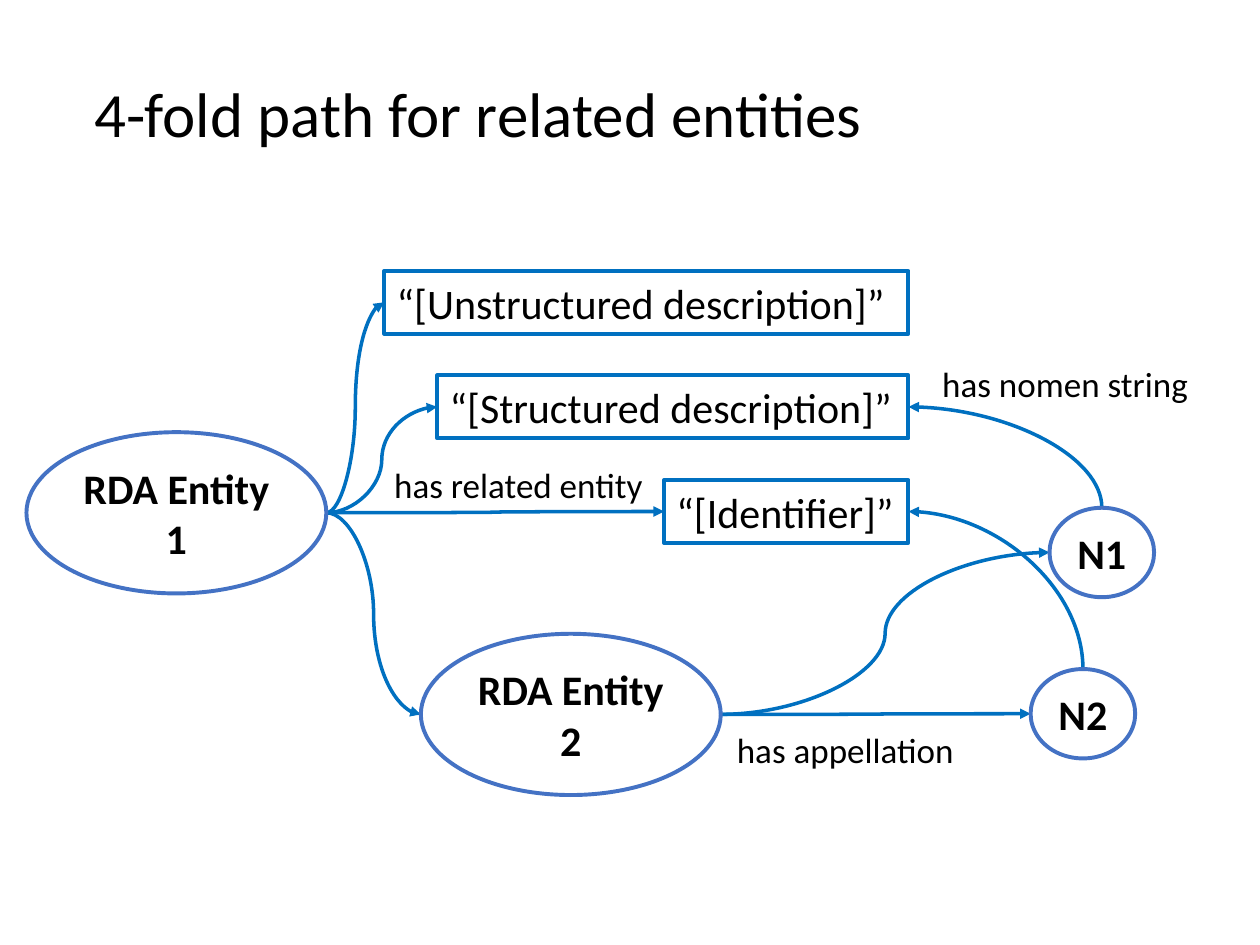
import pptx
import pptx.util
import pptx.dml.color
import pptx.enum.shapes
import pptx.enum.text
import pptx.oxml.ns
import lxml.etree

Inches, Pt = pptx.util.Inches, pptx.util.Pt
RGB = pptx.dml.color.RGBColor.from_string
KIND = pptx.enum.shapes.MSO_SHAPE
ALIGN = pptx.enum.text.PP_ALIGN

THEME = {
    "font": "Calibri", "ink": "000000", "blue": "0070C0", "ring": "4472C4",
    "title": 36, "label": 20, "node": 24, "edge": 2.25, "link": 2,
}

# Content: free text as (words, left, top, width, height, size)
TEXTS = [
    ("4-fold path for related entities", 0.65, 0.54, 6.36, 0.71, "title"),
    ("has appellation", 5.75, 5.73, 1.94, 0.44, "label"),
    ("has related entity", 3.03, 3.63, 2.2, 0.44, "label"),
    ("has nomen string", 7.38, 2.83, 2.23, 0.44, "label"),
]
# Strings share a right edge and an equal step down: (key, words, left)
STRINGS = [
    ("plain", "“[Unstructured description]”", 3.05),
    ("struct", "“[Structured description]”", 3.47),
    ("ident", "“[Identifier]”", 5.27),
]
RIGHT, TOP, STEP, HIGH = 7.21, 2.15, 0.83, 0.5
# Ovals: (key, lines, left, top, size)
BIG, SMALL = (2.38, 1.28), (0.83, 0.71)
OVALS = [
    ("ent1", ["RDA Entity", "1"], 0.21, 3.43, BIG),
    ("ent2", ["RDA Entity", "2"], 3.34, 5.03, BIG),
    ("n1", ["N1"], 8.33, 4.03, SMALL),
    ("n2", ["N2"], 8.18, 5.31, SMALL),
]
# Links that run from a right side to a left side
ACROSS = [
    ("ent2", "n2"), ("ent1", "struct"), ("ent1", "ent2"),
    ("ent1", "ident"), ("ent1", "plain"), ("ent2", "n1"),
]
# Links that rise from a top and turn left to a right side
BENDS = [("n2", "ident"), ("n1", "struct")]


def write(shape, lines, size, bold=False, align=ALIGN.LEFT, wrap=False):
    frame = shape.text_frame
    frame.word_wrap = wrap
    frame.text = "\n".join(lines)
    form = {"name": THEME["font"], "size": Pt(THEME[size]), "bold": bold}
    for para in frame.paragraphs:
        para.alignment = align
        for run in para.runs:
            for key, value in form.items():
                setattr(run.font, key, value)
            run.font.color.rgb = RGB(THEME["ink"])


def draw_node(slide, kind, box, lines, tint, **form):
    shape = slide.shapes.add_shape(kind, *map(Inches, box))
    shape.shadow.inherit = False
    shape.fill.background()
    shape.line.color.rgb = RGB(THEME[tint])
    shape.line.width = Pt(THEME["edge"])
    write(shape, lines, "node", **form)


def draw_link(slide, *ends):
    link = slide.shapes.add_connector(
        pptx.enum.shapes.MSO_CONNECTOR.CURVE, *map(Inches, ends))
    link.line.color.rgb = RGB(THEME["blue"])
    link.line.width = Pt(THEME["link"])
    name = pptx.oxml.ns.qn
    tail = lxml.etree.SubElement(link.line._get_or_add_ln(), name("a:tailEnd"))
    tail.set("type", "triangle")
    lxml.etree.SubElement(link._element.spPr, name("a:effectLst"))
    return link


def draw_bend(slide, x1, y1, x2, y2):
    # A quarter turn: lay the box on its side about its centre, then rotate
    wide, high = y1 - y2, x1 - x2
    left, top = (x1 + x2 - wide) / 2, (y1 + y2 - high) / 2
    link = draw_link(slide, left, top + high, left + wide, top)
    props = link._element.spPr
    props.find(pptx.oxml.ns.qn("a:prstGeom")).set("prst", "curvedConnector2")
    props.find(pptx.oxml.ns.qn("a:xfrm")).set("rot", str(270 * 60000))


def side(box, across, down):
    left, top, wide, high = box
    return left + wide * across, top + high * down


def main():
    deck = pptx.Presentation()
    deck.slide_width, deck.slide_height = Inches(10), Inches(7.5)
    slide = deck.slides.add_slide(deck.slide_layouts[6])

    # Places of all nodes
    boxes = {key: (left, TOP + STEP * row, RIGHT - left, HIGH)
             for row, (key, _, left) in enumerate(STRINGS)}
    boxes.update({key: (left, top, *size) for key, _, left, top, size in OVALS})

    # Title and link labels
    for words, *box, size in TEXTS:
        shape = slide.shapes.add_textbox(*map(Inches, box))
        write(shape, [words], size, wrap=size == "label")

    # Links, behind the nodes
    for start, end in ACROSS:
        draw_link(slide, *side(boxes[start], 1, 0.5), *side(boxes[end], 0, 0.5))
    for start, end in BENDS:
        draw_bend(slide, *side(boxes[start], 0.5, 0), *side(boxes[end], 1, 0.5))

    # Nodes
    for key, words, _ in STRINGS:
        draw_node(slide, KIND.RECTANGLE, boxes[key], [words], "blue")
    for key, lines, *_ in OVALS:
        draw_node(slide, KIND.OVAL, boxes[key], lines, "ring",
                  bold=True, align=ALIGN.CENTER)

    deck.save("out.pptx")


if __name__ == "__main__":
    main()
